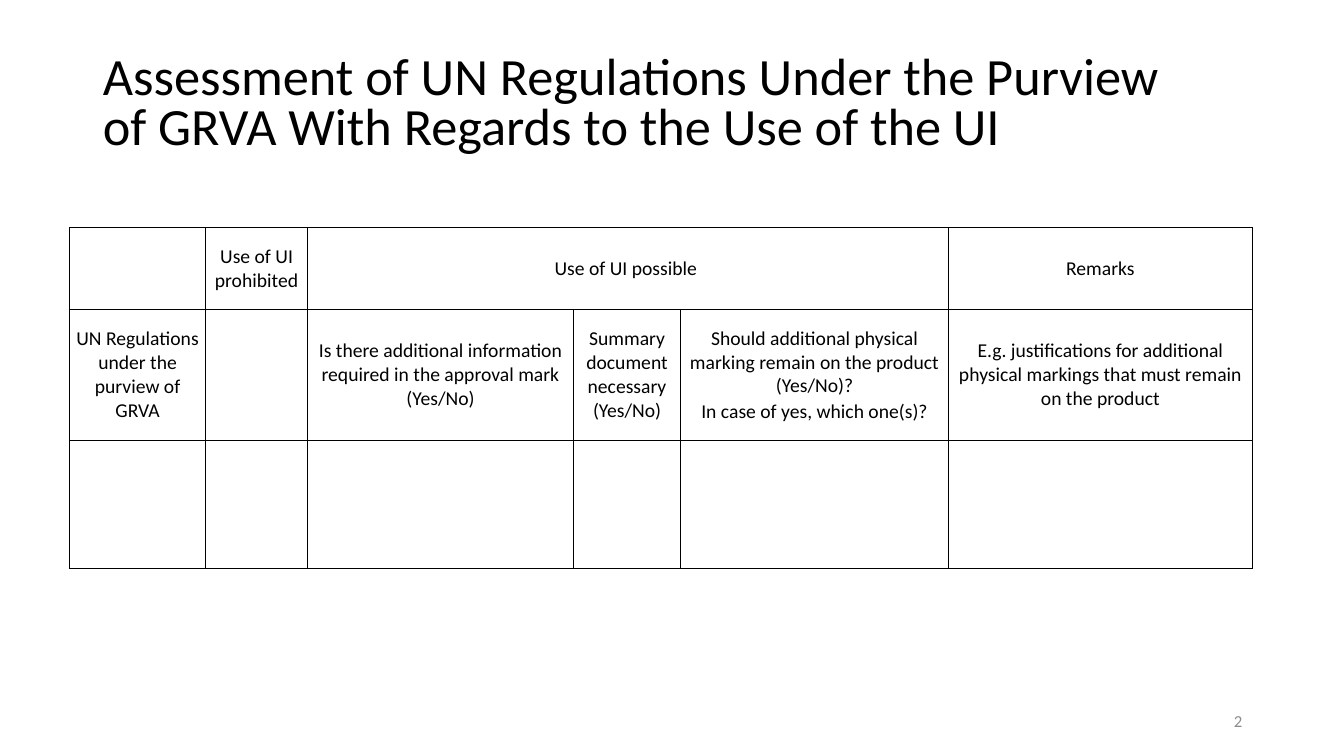
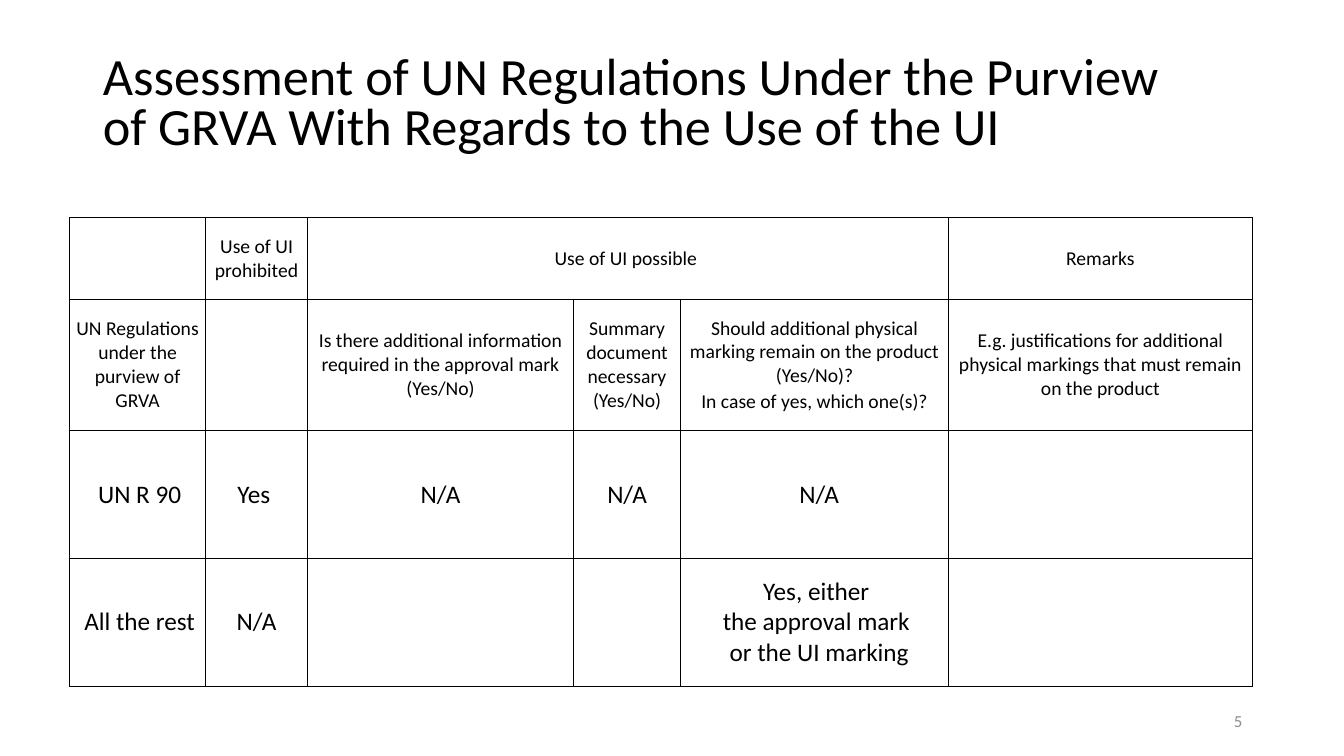
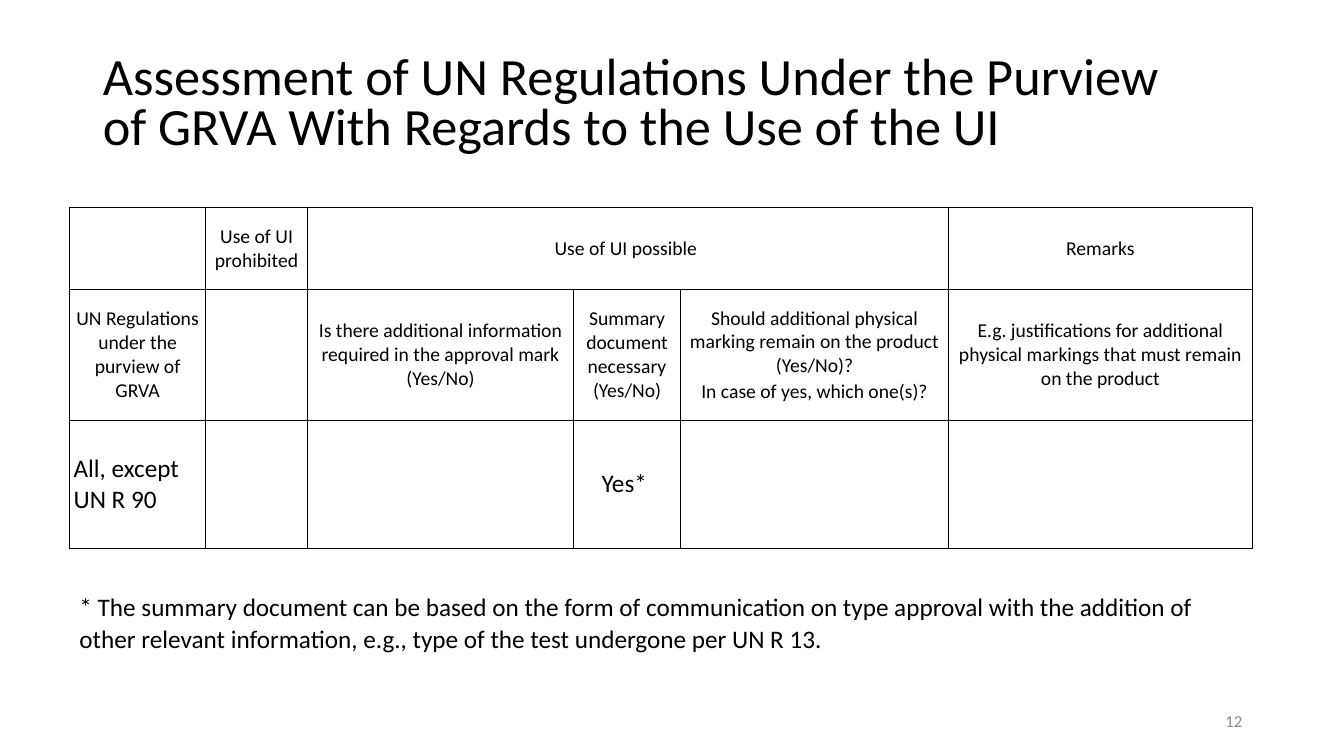
from dataclasses import dataclass

from lxml.etree import SubElement
from pptx import Presentation
from pptx.dml.color import RGBColor
from pptx.enum.text import MSO_ANCHOR as Anchor, MSO_AUTO_SIZE as AutoSize, PP_ALIGN as Align
from pptx.oxml.ns import qn
from pptx.slide import Slide
from pptx.table import _Cell as TableCell
from pptx.text.text import TextFrame
from pptx.util import Inches, Pt


@dataclass(frozen=True)
class Theme:
    font: str = "Calibri"
    ink: str = "000000"
    muted: str = "8C8C8C"
    title_size: float = 37.4
    body_size: float = 18
    header_size: float = 14
    number_size: float = 12
    border_width: float = 1


@dataclass(frozen=True)
class Entry:
    """Text of one table cell; each item of paragraphs is a paragraph."""
    paragraphs: tuple[str, ...] = ()
    size: float = 18
    align: Align = Align.CENTER
    indent: float = 0
    side_margin: float = 0
    span: int = 1


@dataclass(frozen=True)
class Assessment:
    number: str
    table_top: float
    rows: tuple[tuple[Entry, ...], ...]
    footnote: str = ""


THEME = Theme()
TITLE = "Assessment of UN Regulations Under the Purview \nof GRVA With Regards to the Use of the UI"
LEFT, WIDTH = 0.69, 11.73
COLUMN_WIDTHS = (1.35, 1.01, 2.64, 1.06, 2.66, 3.01)
HEADER_HEIGHTS = (0.81, 1.3)
ROW_HEIGHT = 1.27
BLANK = Entry()


def header(*paragraphs: str, side_margin: float = 0, span: int = 1) -> Entry:
    return Entry(paragraphs, THEME.header_size, side_margin=side_margin, span=span)


def answer(text: str, indent: float = 0, align: Align = Align.CENTER) -> Entry:
    return Entry((text,), THEME.body_size, align, indent)


HEADER_ROWS = (
    (BLANK, header("Use of UI prohibited"), header("Use of UI possible ", span=3),
     BLANK, BLANK, header("Remarks")),
    (header("UN Regulations under the purview of GRVA", side_margin=0.04),
     BLANK,
     header("Is there additional information required in the approval mark\n(Yes/No)"),
     header("Summary document necessary (Yes/No)"),
     header("Should additional physical marking remain on the product (Yes/No)?",
            "In case of yes, which one(s)?"),
     header("E.g. justifications for additional physical markings that must remain on the product")),
)

ASSESSMENTS = (
    Assessment("2", 2.26, ((BLANK,) * 6,)),
    Assessment("5", 2.16, (
        (answer("UN R 90", 0.04), answer("Yes "), answer("N/A"), answer("N/A"),
         answer("N/A", 0.09), BLANK),
        (answer("All the rest", 0.04), answer("N/A"), BLANK, BLANK,
         answer("Yes, either \nthe approval mark \nor the UI marking", 0.09), BLANK),
    )),
    Assessment("12", 2.06, (
        (answer("All, except UN R 90", 0.04, Align.LEFT), BLANK, BLANK,
         answer("Yes* "), BLANK, BLANK),
    ), "* The summary document can be based on the form of communication on type approval "
       "with the addition of other relevant information, e.g., type of the test undergone "
       "per UN R 13."),
)


def write_text(frame: TextFrame, *paragraphs: str, size: float, color: str = THEME.ink,
               align: Align = Align.LEFT, line_spacing: float = 1, before: float = 0,
               after: float = 0, indent: float = 0) -> None:
    """Fill the frame; a newline inside a paragraph is a line break."""
    for index, text in enumerate(paragraphs):
        paragraph = frame.paragraphs[0] if index == 0 else frame.add_paragraph()
        paragraph.text = text
        paragraph.alignment = align
        paragraph.line_spacing = line_spacing
        paragraph.space_before, paragraph.space_after = Pt(before), Pt(after)
        if indent:
            paragraph._p.get_or_add_pPr().set("marL", str(Inches(indent)))
        for run in paragraph.runs:
            run.font.name = THEME.font
            run.font.size = Pt(size)
            run.font.color.rgb = RGBColor.from_string(color)
        for line_break in paragraph._p.findall(qn("a:br")):
            SubElement(line_break, qn("a:rPr"), sz=str(round(size * 100)))


def add_text_box(slide: Slide, left: float, top: float, width: float, height: float,
                 anchor: Anchor) -> TextFrame:
    box = slide.shapes.add_textbox(Inches(left), Inches(top), Inches(width), Inches(height))
    frame = box.text_frame
    frame.word_wrap = True
    frame.vertical_anchor = anchor
    return frame


def add_title(slide: Slide) -> None:
    title = slide.shapes.title
    title.left, title.top = Inches(0.92), Inches(0.32)
    title.width, title.height = Inches(11.5), Inches(1.45)
    frame = title.text_frame
    frame.auto_size = AutoSize.NONE
    frame.vertical_anchor = Anchor.MIDDLE
    write_text(frame, TITLE, size=THEME.title_size, line_spacing=0.8)


def draw_borders(cell: TableCell) -> None:
    properties = cell._tc.get_or_add_tcPr()
    for side in ("a:lnL", "a:lnR", "a:lnT", "a:lnB"):
        line = SubElement(properties, qn(side), w=str(Pt(THEME.border_width)))
        fill = SubElement(line, qn("a:solidFill"))
        SubElement(fill, qn("a:srgbClr"), val=THEME.ink)


def fill_cell(cell: TableCell, entry: Entry) -> None:
    draw_borders(cell)
    cell.fill.background()
    cell.vertical_anchor = Anchor.MIDDLE
    cell.margin_left = cell.margin_right = Inches(entry.side_margin)
    cell.margin_top = cell.margin_bottom = 0
    write_text(cell.text_frame, *entry.paragraphs, size=entry.size, align=entry.align,
               before=0.5, after=0.5, indent=entry.indent)


def add_assessment_table(slide: Slide, assessment: Assessment) -> None:
    rows = HEADER_ROWS + assessment.rows
    heights = HEADER_HEIGHTS + (ROW_HEIGHT,) * len(assessment.rows)
    table = slide.shapes.add_table(
        len(rows), len(COLUMN_WIDTHS), Inches(LEFT), Inches(assessment.table_top),
        Inches(WIDTH), Inches(sum(heights))).table
    table.first_row = table.horz_banding = False
    for column, width in zip(table.columns, COLUMN_WIDTHS):
        column.width = Inches(width)
    for row_index, (entries, height) in enumerate(zip(rows, heights)):
        table.rows[row_index].height = Inches(height)
        for column_index, entry in enumerate(entries):
            cell = table.cell(row_index, column_index)
            fill_cell(cell, entry)
            if entry.span > 1:
                cell.merge(table.cell(row_index, column_index + entry.span - 1))


def add_assessment_slide(presentation: Presentation, assessment: Assessment) -> None:
    slide = presentation.slides.add_slide(presentation.slide_layouts.get_by_name("Title Only"))
    add_title(slide)
    add_assessment_table(slide, assessment)
    if assessment.footnote:
        frame = add_text_box(slide, LEFT, 5.8, WIDTH, 1.08, Anchor.TOP)
        write_text(frame, assessment.footnote, size=THEME.body_size,
                   line_spacing=1.05, before=10)
    frame = add_text_box(slide, 9.42, 6.95, 3, 0.4, Anchor.MIDDLE)
    write_text(frame, assessment.number, size=THEME.number_size, color=THEME.muted,
               align=Align.RIGHT)


def main() -> None:
    presentation = Presentation()
    presentation.slide_width, presentation.slide_height = Inches(13.33), Inches(7.5)
    for assessment in ASSESSMENTS:
        add_assessment_slide(presentation, assessment)
    presentation.save("out.pptx")


if __name__ == "__main__":
    main()
